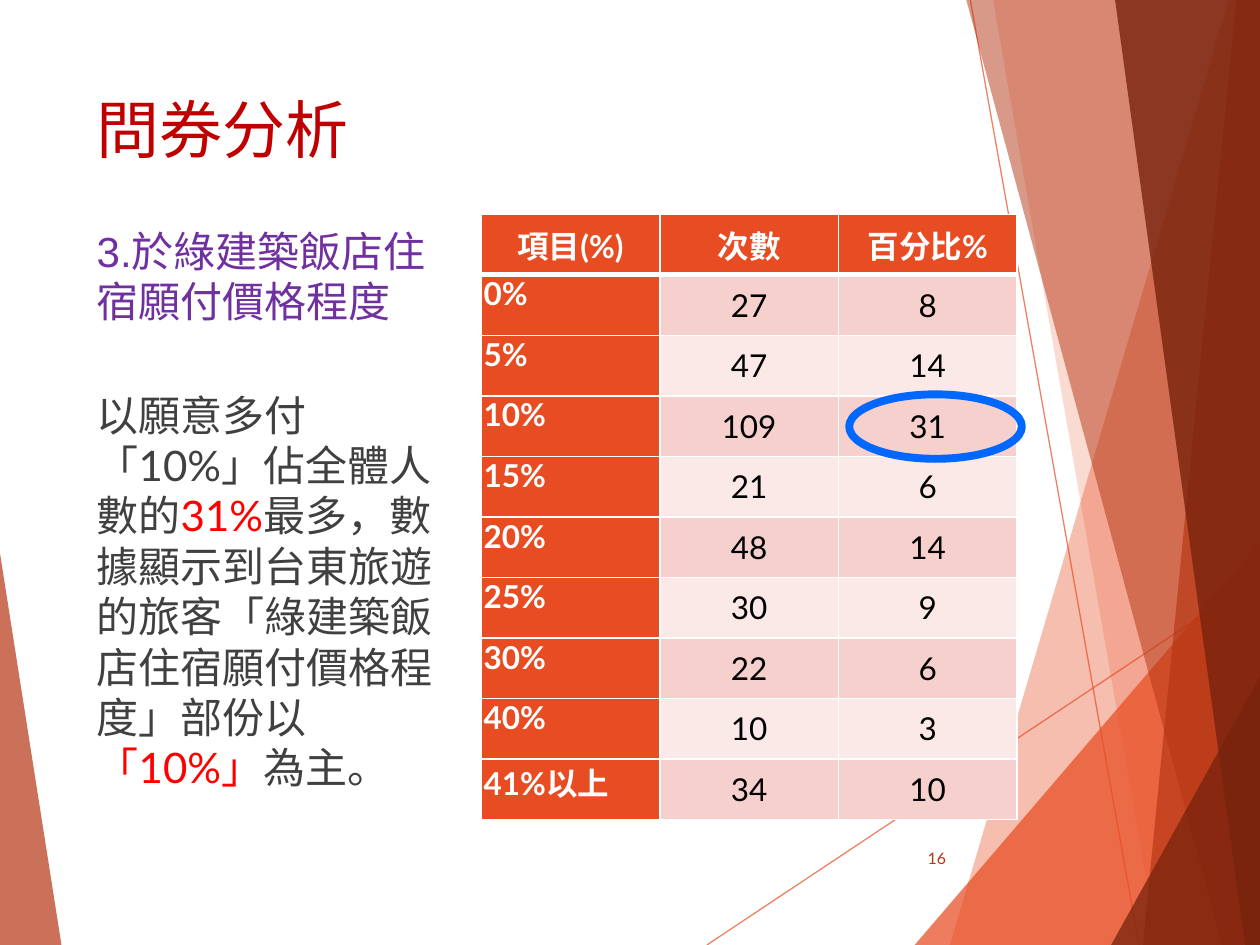
from dataclasses import dataclass
from typing import NamedTuple

from lxml import etree
from pptx import Presentation
from pptx.dml.color import RGBColor
from pptx.enum.shapes import MSO_CONNECTOR, MSO_SHAPE
from pptx.enum.text import MSO_ANCHOR, PP_ALIGN
from pptx.oxml.ns import qn
from pptx.util import Cm, Pt

STRAIGHT = MSO_CONNECTOR.STRAIGHT
OVAL = MSO_SHAPE.OVAL
TOP, MIDDLE, BOTTOM = MSO_ANCHOR.TOP, MSO_ANCHOR.MIDDLE, MSO_ANCHOR.BOTTOM
LEFT, CENTER, RIGHT = PP_ALIGN.LEFT, PP_ALIGN.CENTER, PP_ALIGN.RIGHT


@dataclass(frozen=True)
class Theme:
    accent: str = "E84C22"
    rust: str = "B53513"
    brown: str = "78230D"
    title: str = "C00000"
    question: str = "7030A0"
    body: str = "404040"
    highlight: str = "FF0000"
    ring: str = "0067FF"
    white: str = "FFFFFF"
    black: str = "000000"
    bands: tuple = ("F6D0CD", "FBE9E8")
    heading_font: str = "Arial"
    body_font: str = "Lato"
    title_size: int = 36
    text_size: int = 24
    table_size: int = 18
    number_size: int = 9


THEME = Theme()
PAGE_WIDTH, PAGE_HEIGHT = 25.4, 19.05
EDGE = 25.43


class Box(NamedTuple):
    left: float
    top: float
    width: float
    height: float

    def lengths(self) -> list:
        return [Cm(value) for value in self]


class Span(NamedTuple):
    text: str
    color: str


class Facet(NamedTuple):
    points: tuple
    color: str
    opacity: int


class Ray(NamedTuple):
    start: tuple
    end: tuple


class TextBlock(NamedTuple):
    box: Box
    spans: tuple
    size: int
    font: str
    anchor: int = TOP
    align: int = LEFT
    space_before: int = 0
    bottom_inset: float = 0.13


RAYS = (
    Ray((14.25, PAGE_HEIGHT), (EDGE, 11.61)),
    Ray((19.56, 0), (22.96, PAGE_HEIGHT)),
)


def right_facet(top: float, bottom: float, color: str, opacity: int) -> Facet:
    points = ((top, 0), (bottom, PAGE_HEIGHT), (EDGE, PAGE_HEIGHT), (EDGE, 0))
    return Facet(points, color, opacity)


def corner_facet(left: float, top: float, color: str, opacity: int) -> Facet:
    points = ((left, PAGE_HEIGHT), (EDGE, top), (EDGE, PAGE_HEIGHT))
    return Facet(points, color, opacity)


FACETS = (
    right_facet(24.77, 19.15, THEME.accent, 36),
    right_facet(20.02, 23.34, THEME.accent, 20),
    corner_facet(18.44, 10.9, THEME.accent, 72),
    right_facet(19.48, 24.64, THEME.rust, 50),
    right_facet(24.92, 23.04, THEME.rust, 66),
    right_facet(22.48, 25.1, THEME.brown, 80),
    corner_facet(22.4, 13.59, THEME.brown, 76),
    Facet(((0, 11.15), (1.24, PAGE_HEIGHT), (0, PAGE_HEIGHT)), THEME.rust, 70),
)

TEXTS = (
    TextBlock(Box(1.7, 4.17, 7.75, 3.55),
              (Span("3.於綠建築飯店住宿願付價格程度", THEME.question),),
              THEME.text_size, THEME.heading_font, BOTTOM, bottom_inset=1.14),
    TextBlock(Box(1.7, 7.72, 7.75, 7.19),
              (Span("以願意多付「10%」佔全體人數的", THEME.body),
               Span("31%", THEME.highlight),
               Span("最多，數據顯示到台東旅遊的旅客「綠建築飯店住宿願付價格程度」部份以", THEME.body),
               Span("「10%」", THEME.highlight),
               Span("為主。", THEME.body)),
              THEME.text_size, THEME.body_font, space_before=10),
    TextBlock(Box(17.9, 16.79, 1.42, 1.02), (Span("16", THEME.rust),),
              THEME.number_size, THEME.body_font, MIDDLE, RIGHT),
    TextBlock(Box(1.7, 1.7, 21, 3.66), (Span("問券分析", THEME.title),),
              THEME.title_size, THEME.heading_font),
)

TABLE_BOX = Box(9.7, 4.32, 10.8, 12.2)
ROWS = (
    ("項目(%)", "次數", "百分比%"),
    ("0%", "27", "8"),
    ("5%", "47", "14"),
    ("10%", "109", "31"),
    ("15%", "21", "6"),
    ("20%", "48", "14"),
    ("25%", "30", "9"),
    ("30%", "22", "6"),
    ("40%", "10", "3"),
    ("41%以上", "34", "10"),
)
RING_BOX = Box(17.12, 7.95, 3.48, 1.3)


def set_opacity(fill_parent, opacity: int) -> None:
    color = fill_parent.find(f".//{qn('a:srgbClr')}")
    etree.SubElement(color, qn("a:alpha"), val=str(opacity * 1000))


def draw_ray(page, ray: Ray) -> None:
    start, end = [[Cm(value) for value in point] for point in ray]
    line = page.shapes.add_connector(STRAIGHT, *start, *end)
    line.line.color.rgb = RGBColor.from_string(THEME.accent)
    line.line.width = Pt(0.75)
    properties = line._element.spPr
    set_opacity(properties, 70)
    etree.SubElement(properties, qn("a:effectLst"))


def draw_facet(page, facet: Facet) -> None:
    points = [(Cm(x), Cm(y)) for x, y in facet.points]
    builder = page.shapes.build_freeform(*points[0])
    builder.add_line_segments(points[1:])
    shape = builder.convert_to_shape()
    shape.shadow.inherit = False
    shape.fill.solid()
    shape.fill.fore_color.rgb = RGBColor.from_string(facet.color)
    set_opacity(shape._element.spPr, facet.opacity)
    shape.line.fill.background()


def style_font(font, name: str, size: int, color: str, bold: bool = False) -> None:
    font.name = name
    font.size = Pt(size)
    font.bold = bold
    font.color.rgb = RGBColor.from_string(color)


def draw_text(page, block: TextBlock) -> None:
    frame = page.shapes.add_textbox(*block.box.lengths()).text_frame
    frame.word_wrap = True
    frame.vertical_anchor = block.anchor
    frame.margin_bottom = Cm(block.bottom_inset)
    para = frame.paragraphs[0]
    para.alignment = block.align
    para.space_before = Pt(block.space_before)
    for span in block.spans:
        run = para.add_run()
        run.text = span.text
        style_font(run.font, block.font, block.size, span.color)


def draw_borders(cell, top: float, bottom: float) -> None:
    properties = cell._tc.get_or_add_tcPr()
    for side, width in (("L", 1), ("R", 1), ("T", top), ("B", bottom)):
        line = etree.SubElement(properties, qn(f"a:ln{side}"), w=str(Pt(width)))
        fill = etree.SubElement(line, qn("a:solidFill"))
        etree.SubElement(fill, qn("a:srgbClr"), val=THEME.white)


def fill_cell(cell, text: str, row: int, column: int) -> None:
    heading = row == 0 or column == 0
    side_label = row > 0 and column == 0
    draw_borders(cell, 3 if row == 1 else 1, 3 if row == 0 else 1)
    cell.margin_left = cell.margin_right = Cm(0.05)
    cell.margin_top = cell.margin_bottom = 0
    cell.vertical_anchor = TOP if side_label else MIDDLE
    cell.fill.solid()
    color = THEME.accent if heading else THEME.bands[(row - 1) % 2]
    cell.fill.fore_color.rgb = RGBColor.from_string(color)
    cell.text_frame.text = text
    para = cell.text_frame.paragraphs[0]
    para.alignment = LEFT if side_label else CENTER
    style_font(para.runs[0].font, THEME.body_font, THEME.table_size,
               THEME.white if heading else THEME.black, heading)


def draw_table(page) -> None:
    table = page.shapes.add_table(len(ROWS), len(ROWS[0]), *TABLE_BOX.lengths()).table
    for row, texts in enumerate(ROWS):
        for column, text in enumerate(texts):
            fill_cell(table.cell(row, column), text, row, column)


def draw_ring(page) -> None:
    ring = page.shapes.add_shape(OVAL, *RING_BOX.lengths())
    ring.shadow.inherit = False
    ring.fill.background()
    ring.line.color.rgb = RGBColor.from_string(THEME.ring)
    ring.line.width = Pt(4.5)


def main() -> None:
    deck = Presentation()
    deck.slide_width, deck.slide_height = Cm(PAGE_WIDTH), Cm(PAGE_HEIGHT)
    page = deck.slides.add_slide(deck.slide_layouts[6])
    for ray in RAYS:
        draw_ray(page, ray)
    for facet in FACETS:
        draw_facet(page, facet)
    draw_table(page)
    for block in TEXTS:
        draw_text(page, block)
    draw_ring(page)
    deck.save("out.pptx")


if __name__ == "__main__":
    main()
